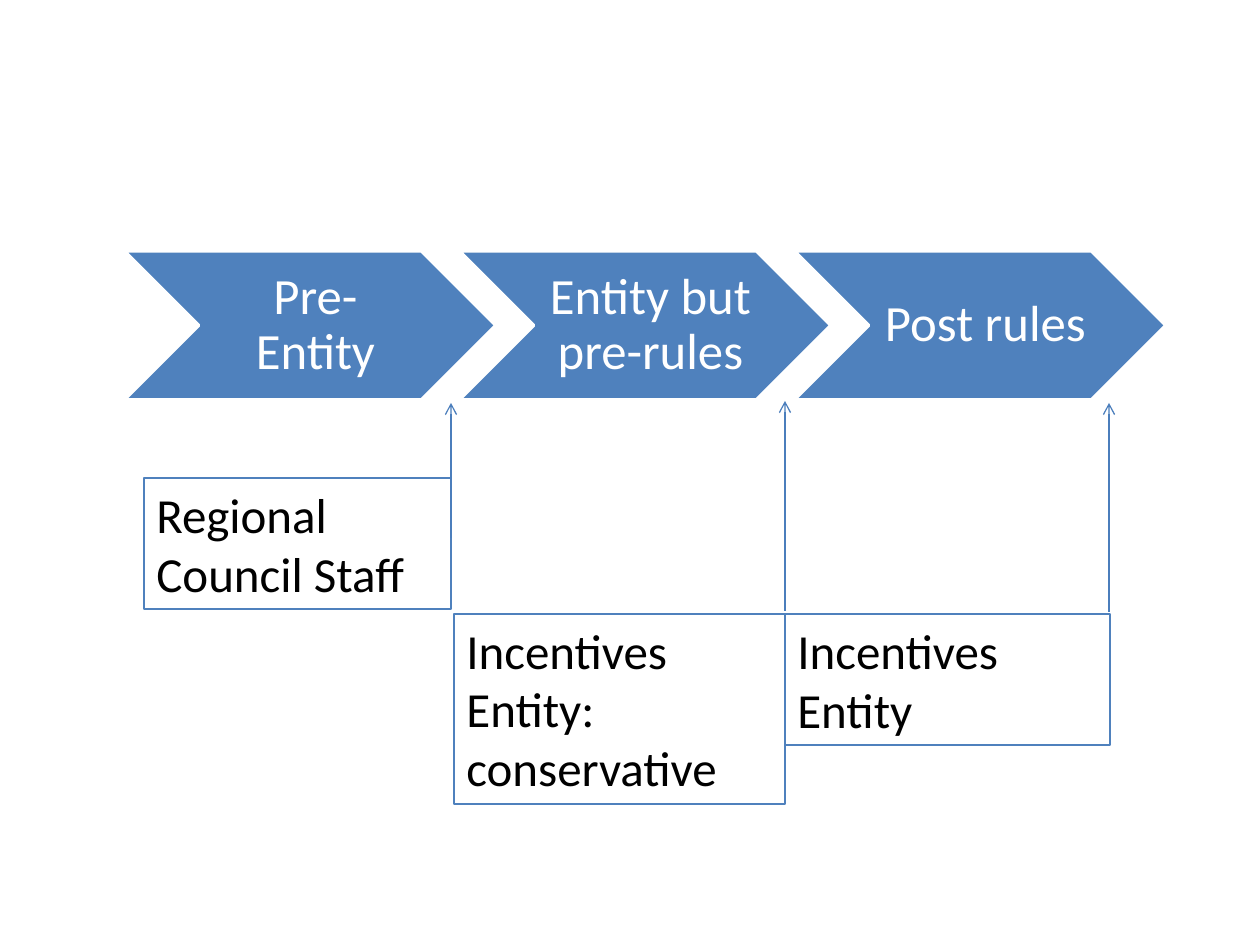
from lxml.etree import SubElement
from pptx import Presentation
from pptx.dml.color import RGBColor
from pptx.enum.shapes import MSO_CONNECTOR as Connector, MSO_SHAPE as Shape
from pptx.enum.text import MSO_ANCHOR as Anchor, MSO_AUTO_SIZE as AutoSize, PP_ALIGN as Align
from pptx.oxml.ns import qn
from pptx.util import Emu, Pt

EMU_PER_PX = 914400 / 126
BLUE, ARROW_BLUE, WHITE, BLACK = "4F81BD", "4B7EBC", "FFFFFF", "000000"


def px(length):
    return Emu(round(length * EMU_PER_PX))


def color(hex_string):
    return RGBColor.from_string(hex_string)


def write_text(frame, text, *, size, hex_color, align=Align.LEFT, anchor=Anchor.TOP, spacing=None):
    frame.word_wrap = True
    frame.vertical_anchor = anchor
    paragraph = frame.paragraphs[0]
    paragraph.alignment = align
    paragraph.line_spacing = spacing
    run = paragraph.add_run()
    run.text = text
    run.font.name = "Calibri"
    run.font.size = Pt(size)
    run.font.color.rgb = color(hex_color)


class TimelineSlide:
    def __init__(self, slide):
        self.slide = slide
        self.line_width = Pt(0.75)

    def add_phase(self, text, left, top, width, height):
        shape = self.slide.shapes.add_shape(Shape.CHEVRON, px(left), px(top), px(width), px(height))
        shape.shadow.inherit = False
        shape.fill.solid()
        shape.fill.fore_color.rgb = color(BLUE)
        shape.line.color.rgb = color(WHITE)
        shape.line.width = Pt(2)
        frame = shape.text_frame
        frame.margin_left = px(16)
        frame.margin_right = frame.margin_top = frame.margin_bottom = px(5)
        write_text(frame, text, size=29, hex_color=WHITE, align=Align.CENTER,
                   anchor=Anchor.MIDDLE, spacing=0.9)

    def add_actor(self, text, left, top, width, height):
        shape = self.slide.shapes.add_shape(Shape.RECTANGLE, px(left), px(top), px(width), px(height))
        shape.shadow.inherit = False
        shape.fill.background()
        shape.line.color.rgb = color(BLUE)
        shape.line.width = self.line_width
        write_text(shape.text_frame, text, size=28, hex_color=BLACK)
        shape.text_frame.auto_size = AutoSize.SHAPE_TO_FIT_TEXT

    def add_up_arrow(self, x, bottom, top):
        arrow = self.slide.shapes.add_connector(Connector.STRAIGHT, px(x), px(bottom), px(x), px(top))
        arrow.line.color.rgb = color(ARROW_BLUE)
        arrow.line.width = self.line_width
        SubElement(arrow.line._get_or_add_ln(), qn("a:tailEnd"), type="arrow")
        SubElement(arrow._element.spPr, qn("a:effectLst"))


def main():
    presentation = Presentation()
    presentation.slide_width, presentation.slide_height = px(1260), px(945)
    blank_layout = presentation.slide_layouts[6]
    timeline = TimelineSlide(presentation.slides.add_slide(blank_layout))

    for index, phase in enumerate(["Pre-Entity", "Entity but pre-rules", "Post rules"]):
        timeline.add_phase(phase, 124 + 335 * index, 251, 372, 149)

    timeline.add_actor("Regional Council Staff", 144, 478, 307, 131)
    timeline.add_actor("Incentives Entity", 785, 614, 325, 131)
    timeline.add_actor("Incentives Entity: conservative", 454, 614, 331, 190)

    for x, bottom, top in [(451, 538, 403), (785, 611, 401), (1109, 612, 403)]:
        timeline.add_up_arrow(x, bottom, top)

    presentation.save("out.pptx")


if __name__ == "__main__":
    main()
